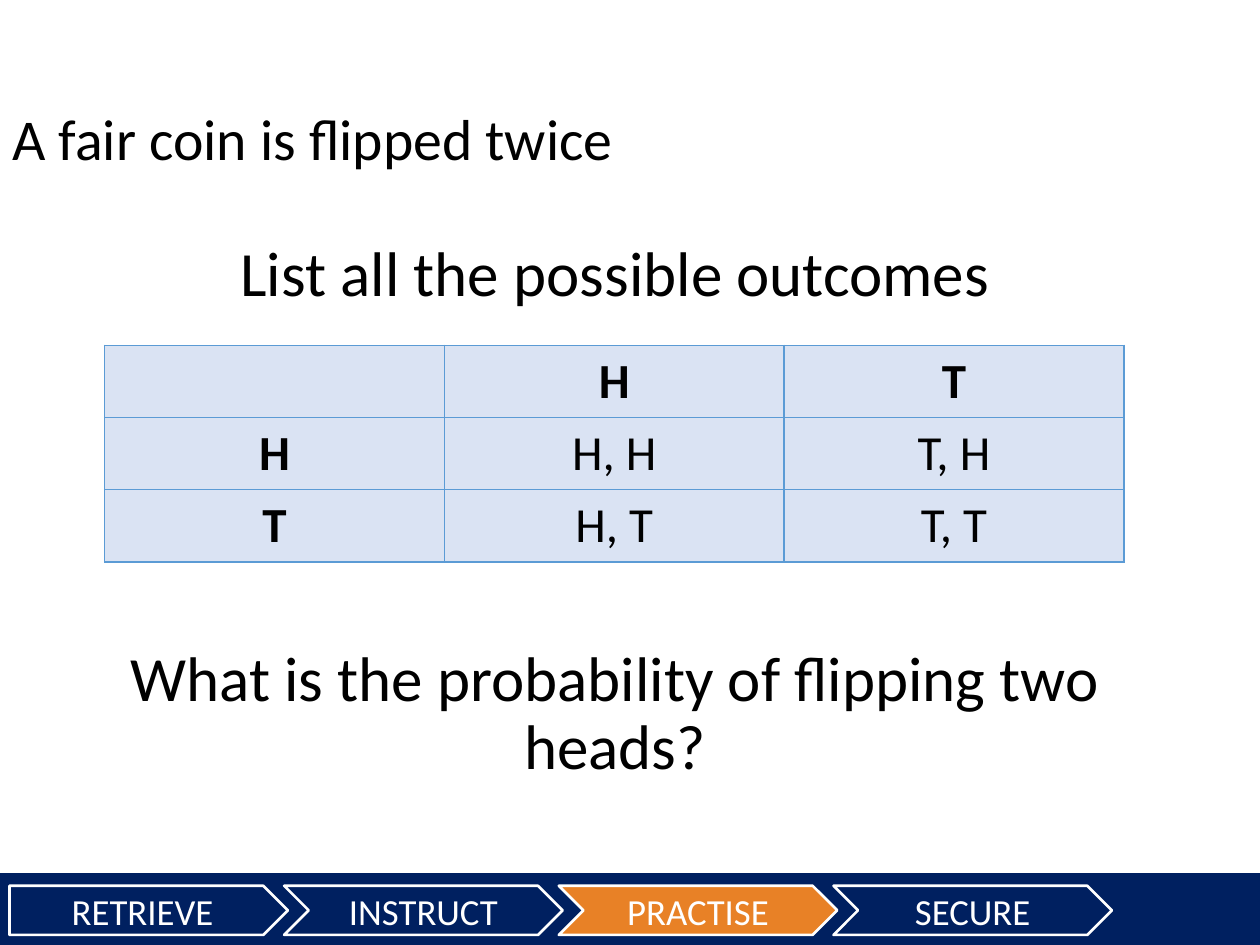
from lxml.etree import SubElement
from pptx import Presentation
from pptx.dml.color import RGBColor
from pptx.enum.shapes import MSO_SHAPE as Shape
from pptx.enum.text import MSO_ANCHOR as Anchor, PP_ALIGN as Align
from pptx.oxml.ns import qn
from pptx.util import Inches, Pt

COLORS = {
    "navy": "002060",
    "orange": "E88126",
    "white": "FFFFFF",
    "black": "000000",
    "cell": "DAE3F3",
    "border": "5B9BD5",
}
FONT = "Calibri"
GRID = 0.1  # inches per column and per row: 100 columns by 75 rows


def rgb(name):
    return RGBColor.from_string(COLORS[name])


def span(units):
    return Inches(units * GRID)


def write(frame, text, size, color="black", bold=False, align=Align.CENTER,
          spacing=None):
    paragraph = frame.paragraphs[0]
    paragraph.alignment = align
    if spacing:
        paragraph.line_spacing = spacing
    run = paragraph.add_run()
    run.text = text
    font = run.font
    font.name, font.size, font.bold = FONT, Pt(size), bold
    font.color.rgb = rgb(color)


def add_borders(cell, color, width):
    properties = cell._tc.get_or_add_tcPr()
    for side in ("a:lnL", "a:lnR", "a:lnT", "a:lnB"):
        line = SubElement(properties, qn(side), w=str(Pt(width)))
        fill = SubElement(line, qn("a:solidFill"))
        SubElement(fill, qn("a:srgbClr"), val=COLORS[color])


class LessonSlide:
    def __init__(self, deck):
        self.slide = deck.slides.add_slide(deck.slide_layouts[6])

    def text(self, text, box, size, anchor=Anchor.TOP, **style):
        frame = self.slide.shapes.add_textbox(*map(span, box)).text_frame
        frame.word_wrap = True
        frame.vertical_anchor = anchor
        write(frame, text, size, spacing=0.9, **style)

    def shape(self, kind, box, fill, outline=None):
        shape = self.slide.shapes.add_shape(kind, *map(span, box))
        shape.shadow.inherit = False
        shape.fill.solid()
        shape.fill.fore_color.rgb = rgb(fill)
        if outline:
            shape.line.color.rgb = rgb(outline)
            shape.line.width = Pt(1.5)
        else:
            shape.line.fill.background()
        return shape

    def stage_bar(self, stages, current):
        """Draw the footer band with one arrow per stage, the current one lit."""
        self.shape(Shape.RECTANGLE, (0, 69.3, 100, 5.7), "navy")
        for index, stage in enumerate(stages):
            arrow = self.shape(
                Shape.CHEVRON if index else Shape.PENTAGON,
                (0.75 + 21.8 * index, 70.3, 22.1, 3.9),
                "orange" if stage == current else "navy", "white")
            arrow.text_frame.word_wrap = False
            arrow.text_frame.vertical_anchor = Anchor.MIDDLE
            write(arrow.text_frame, stage, 21, color="white")

    def outcome_table(self, rows, box):
        table = self.slide.shapes.add_table(
            len(rows), len(rows[0]), *map(span, box)).table
        for r, row in enumerate(rows):
            for c, outcome in enumerate(row):
                cell = table.cell(r, c)
                add_borders(cell, "border", 1)
                cell.fill.solid()
                cell.fill.fore_color.rgb = rgb("cell")
                if outcome:
                    write(cell.text_frame, outcome, 28,
                          bold=r == 0 or c == 0)


def main():
    deck = Presentation()
    deck.slide_width, deck.slide_height = span(100), span(75)
    lesson = LessonSlide(deck)

    lesson.stage_bar(["RETRIEVE", "INSTRUCT", "PRACTISE", "SECURE"],
                     current="PRACTISE")
    lesson.text("A fair coin is flipped twice", (0, 4, 86.2, 14.5), 33,
                anchor=Anchor.MIDDLE, align=Align.LEFT)
    lesson.text("List all the possible outcomes", (5.7, 18.7, 86.2, 7), 36)
    lesson.text("What is the probability of flipping two heads?",
                (5.7, 50.9, 86.2, 12), 36)

    faces = ["H", "T"]
    outcomes = [[f"{first}, {second}" for first in faces] for second in faces]
    lesson.outcome_table(
        [["", *faces], *([face, *row] for face, row in zip(faces, outcomes))],
        (8.3, 27.4, 80.9, 17.2))
    deck.save("out.pptx")


if __name__ == "__main__":
    main()
